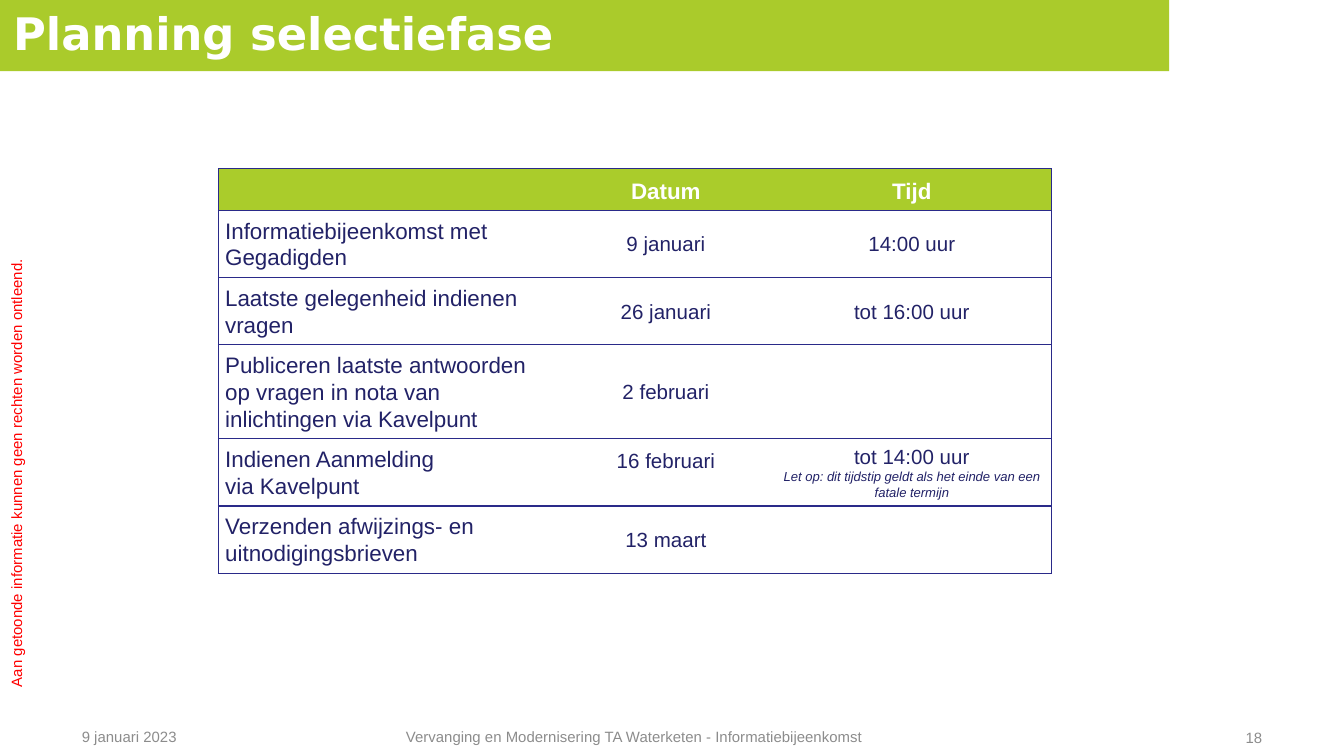
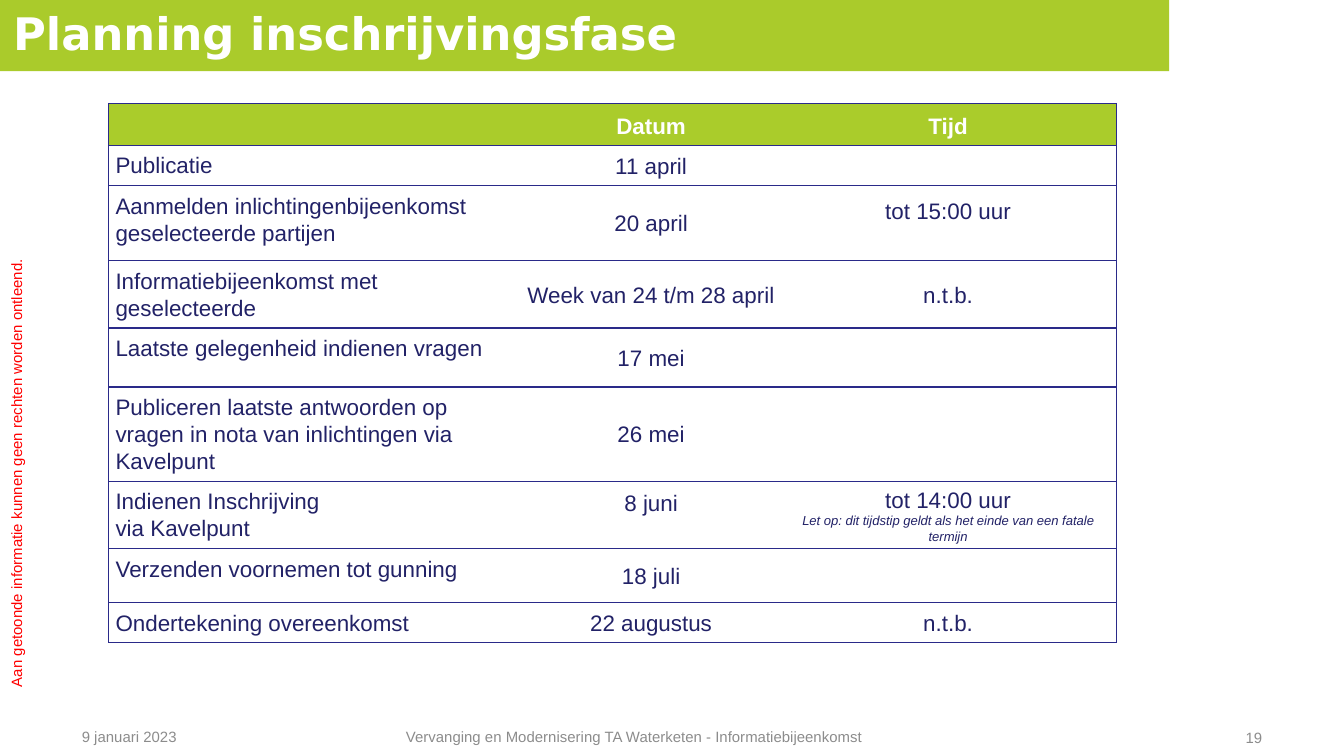
from lxml.etree import SubElement
from pptx import Presentation
from pptx.dml.color import RGBColor
from pptx.enum.shapes import MSO_SHAPE
from pptx.enum.text import MSO_ANCHOR as Anchor, PP_ALIGN as Align
from pptx.oxml.ns import qn
from pptx.util import Inches, Pt

GREEN, TABLE_GREEN = "AACB2B", "AACC2B"
INK, BORDER, GREY, RED, WHITE = "222267", "2A2A89", "8C8C8C", "FF0000", "FFFFFF"
BODY_FONT, TITLE_FONT = "Arial", "DejaVu Sans"

DISCLAIMER = "Aan getoonde informatie kunnen geen rechten worden ontleend."
EVENT_DATE = "9 januari 2023"
EVENT_NAME = "Vervanging en Modernisering TA Waterketen - Informatiebijeenkomst"
DEADLINE_NOTE = "Let op: dit tijdstip geldt als het einde van een fatale termijn"
HEADINGS = ("", "Datum", "Tijd")

# Each row: height in grid units, step, date, time.
# A trailing newline keeps the line below the text free.
SELECTION_ROWS = [
    (5, "Informatiebijeenkomst met Gegadigden", "9 januari", "14:00 uur"),
    (5, "Laatste gelegenheid indienen vragen", "26 januari", "tot 16:00 uur"),
    (7, "Publiceren laatste antwoorden op vragen in nota van "
        "inlichtingen via Kavelpunt", "2 februari", ""),
    (5, "Indienen Aanmelding\nvia Kavelpunt", "16 februari\n",
     f"tot 14:00 uur\n{DEADLINE_NOTE}"),
    (5, "Verzenden afwijzings- en uitnodigingsbrieven", "13 maart", ""),
]
TENDER_ROWS = [
    (3, "Publicatie", "11 april", ""),
    (5.6, "Aanmelden inlichtingenbijeenkomst geselecteerde partijen",
     "20 april", "tot 15:00 uur\n"),
    (5, "Informatiebijeenkomst met geselecteerde",
     "Week van 24 t/m 28 april", "n.t.b."),
    (4.4, "Laatste gelegenheid indienen vragen", "17 mei", ""),
    (7, "Publiceren laatste antwoorden op vragen in nota van "
        "inlichtingen via Kavelpunt", "26 mei", ""),
    (5, "Indienen Inschrijving\nvia Kavelpunt", "8 juni\n",
     f"tot 14:00 uur\n{DEADLINE_NOTE}"),
    (4, "Verzenden voornemen tot gunning", "18 juli", ""),
    (3, "Ondertekening overeenkomst", "22 augustus", "n.t.b."),
]


def color(hex_value):
    return RGBColor.from_string(hex_value)


def grid(units):
    """Convert grid units (100 columns across the slide) to a length."""
    return Inches(units / 10)


def style(paragraph, size, hex_value, align=Align.LEFT, font=BODY_FONT,
          bold=False, italic=False):
    paragraph.alignment = align
    paragraph.font.name = font
    paragraph.font.size = Pt(size)
    paragraph.font.bold = bold
    paragraph.font.italic = italic
    paragraph.font.color.rgb = color(hex_value)


def set_margins(cell, margin, bottom):
    cell.margin_left = cell.margin_right = cell.margin_top = Inches(margin)
    cell.margin_bottom = Inches(bottom)


def add_borders(cell, column, last_column):
    """Draw horizontal rules and the table's outer sides only."""
    visible = {"lnL": column == 0, "lnR": column == last_column,
               "lnT": True, "lnB": True}
    properties = cell._tc.get_or_add_tcPr()
    for tag, shown in visible.items():
        line = SubElement(properties, qn(f"a:{tag}"), w=str(Pt(0.75)))
        if shown:
            fill = SubElement(line, qn("a:solidFill"))
            SubElement(fill, qn("a:srgbClr"), val=BORDER)
        else:
            SubElement(line, qn("a:noFill"))


class Deck:
    def __init__(self):
        self.presentation = Presentation()
        self.presentation.slide_width = grid(100)
        self.presentation.slide_height = grid(100) * 9 // 16
        self.slide = None

    def new_slide(self, title, number):
        layout = self.presentation.slide_layouts[6]
        self.slide = self.presentation.slides.add_slide(layout)
        disclaimer = self.text(DISCLAIMER, (-15.8, 34, 34, 2.4), RED,
                               Align.CENTER)
        disclaimer.rotation = 270
        self.title(title)
        self.text(EVENT_DATE, (5.1, 53.7, 16.5, 2.2), GREY)
        self.text(EVENT_NAME, (22.4, 53.7, 49.6, 2.2), GREY, Align.CENTER)
        self.text(str(number), (89.6, 53.8, 5.3, 2.2), GREY, Align.RIGHT)

    def title(self, text):
        band = self.slide.shapes.add_shape(
            MSO_SHAPE.RECTANGLE, *map(grid, (0, -0.1, 87, 5.4)))
        band.shadow.inherit = False
        band.fill.solid()
        band.fill.fore_color.rgb = color(GREEN)
        band.line.fill.background()
        frame = band.text_frame
        frame.vertical_anchor = Anchor.MIDDLE
        frame.margin_bottom = Inches(0.08)
        frame.text = text
        style(frame.paragraphs[0], 24, WHITE, font=TITLE_FONT, bold=True)

    def text(self, text, box, hex_value, align=Align.LEFT):
        shape = self.slide.shapes.add_textbox(*map(grid, box))
        frame = shape.text_frame
        frame.word_wrap = True
        frame.vertical_anchor = Anchor.MIDDLE
        frame.text = text
        style(frame.paragraphs[0], 8, hex_value, align)
        return shape

    def schedule(self, left, top, widths, rows, date_size):
        heights = [3.1] + [row[0] for row in rows]
        frame = self.slide.shapes.add_table(
            len(heights), len(widths),
            *map(grid, (left, top, sum(widths), sum(heights))))
        table = frame.table
        table.first_row = table.horz_banding = False
        for column, width in zip(table.columns, widths):
            column.width = grid(width)
        for row, height in zip(table.rows, heights):
            row.height = grid(height)
        for row, texts in enumerate([HEADINGS] + [row[1:] for row in rows]):
            for column, text in enumerate(texts):
                cell = table.cell(row, column)
                add_borders(cell, column, len(widths) - 1)
                if row == 0:
                    self.heading_cell(cell, text)
                else:
                    self.body_cell(cell, text, column, date_size)

    def heading_cell(self, cell, text):
        cell.fill.solid()
        cell.fill.fore_color.rgb = color(TABLE_GREEN)
        set_margins(cell, 0.05 if text else 0, 0)
        if text:
            cell.text = text
            paragraph = cell.text_frame.paragraphs[0]
            paragraph.line_spacing = 1.15
            style(paragraph, 12, WHITE, Align.CENTER, bold=True)

    def body_cell(self, cell, text, column, date_size):
        cell.fill.background()
        if not text:
            set_margins(cell, 0, 0)
            return
        is_step = column == 0
        cell.text = text.rstrip("\n")
        if is_step:
            set_margins(cell, 0.05, 0)
        else:
            set_margins(cell, 0.02, 0.2 if text.endswith("\n") else 0.02)
            cell.vertical_anchor = Anchor.MIDDLE
        for paragraph in cell.text_frame.paragraphs:
            is_note = paragraph.text == DEADLINE_NOTE
            size = 7 if is_note else 12 if is_step else date_size
            paragraph.line_spacing = 1.07
            style(paragraph, size, INK,
                  Align.LEFT if is_step else Align.CENTER, italic=is_note)


def main():
    deck = Deck()
    deck.new_slide("Planning selectiefase", 18)
    deck.schedule(16.25, 12.55, (25.4, 15.8, 20.8), SELECTION_ROWS, 11)
    deck.new_slide("Planning inschrijvingsfase", 19)
    deck.schedule(8.1, 7.7, (30.8, 19.1, 25.1), TENDER_ROWS, 12)
    deck.presentation.save("out.pptx")


if __name__ == "__main__":
    main()
